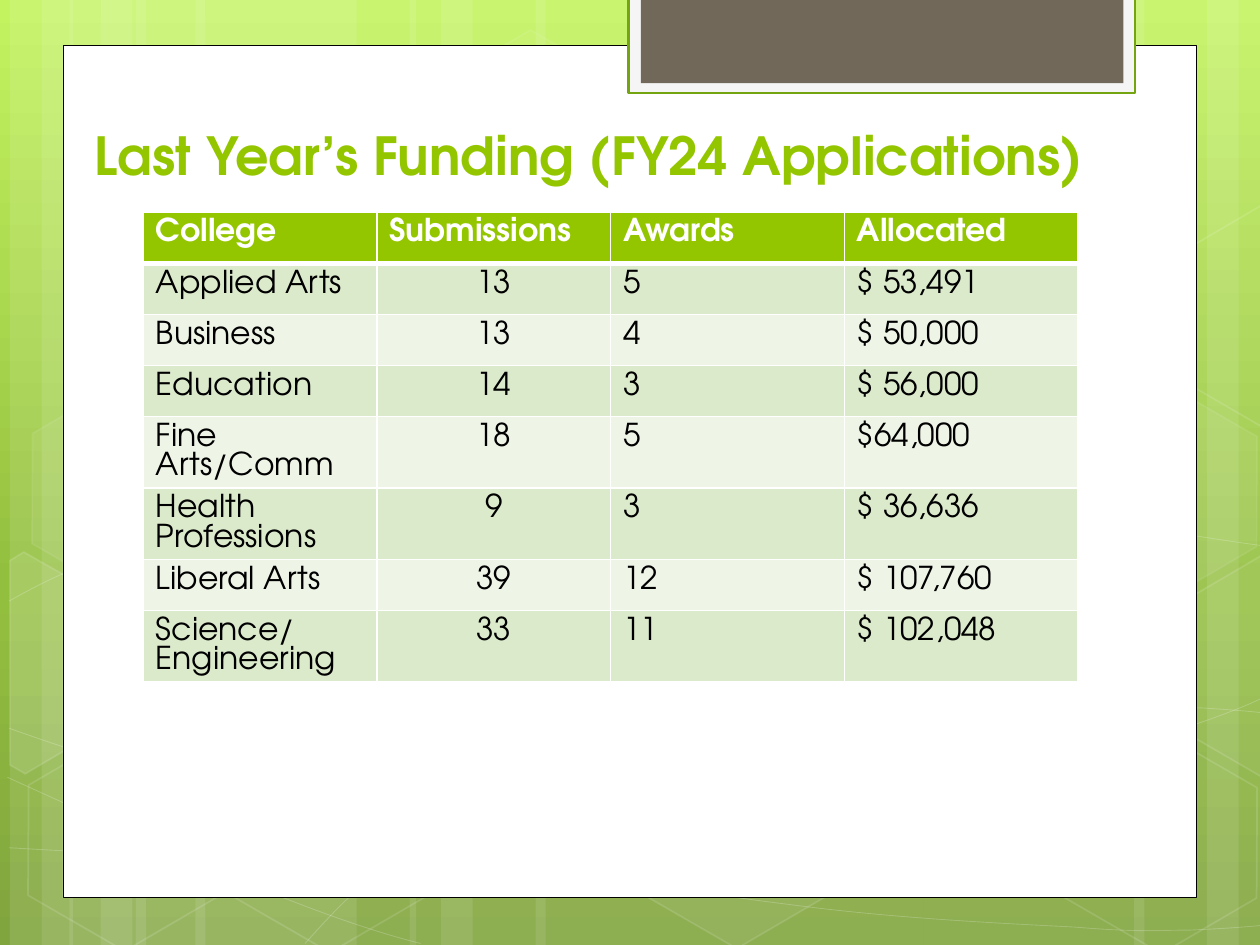
from copy import deepcopy

from lxml import etree
from pptx import Presentation
from pptx.dml.color import RGBColor
from pptx.enum.shapes import MSO_SHAPE
from pptx.enum.text import MSO_ANCHOR, MSO_AUTO_SIZE, PP_ALIGN
from pptx.oxml.ns import qn
from pptx.util import Cm, Pt

RECT, HEXAGON = MSO_SHAPE.RECTANGLE, MSO_SHAPE.HEXAGON
LEFT, CENTER = PP_ALIGN.LEFT, PP_ALIGN.CENTER
FONT = "TeX Gyre Adventor"
COLORS = {
    "white": "FFFFFF", "black": "000000", "green": "94C600",
    "band_dark": "DCEACC", "band_light": "EEF5E7",
    "tab": "F5F5F5", "tab_line": "74A510", "tab_core": "71685A",
}
BACKGROUND = [(0, "C3F35F"), (0.62, "93BF3F"), (1, "81A53E")]

# Content
TITLE = "Last Year’s Funding (FY24 Applications)"
ROWS = [
    ("College", "Submissions", "Awards", "Allocated"),
    ("Applied Arts", "13", "5", "$ 53,491"),
    ("Business", "13", "4", "$ 50,000"),
    ("Education", "14", "3", "$ 56,000"),
    ("Fine Arts/Comm", "18", "5", "$64,000"),
    ("Health Professions", "9", "3", "$ 36,636"),
    ("Liberal Arts", "39", "12", "$ 107,760"),
    ("Science/\nEngineering", "33", "11", "$ 102,048"),
]

# Backdrop, in cm. Strips: left, width
STRIPS = [
    (2.74, 4.45), (0.2, 1.27), (0.84, 2.11), (3.94, 4.45), (1.4, 1.27), (2.03, 2.11),
    (18.62, 4.45), (24.33, 1.27), (22.86, 2.11), (10.8, 7.82), (8.26, 1.27), (8.89, 2.11),
]
# Curves: a start point, then three Bezier points for each segment
CURVES = [
    [(0.18, 17.09), (1.55, 17.17), (2.92, 17.25), (4.83, 17.22),
     (6.73, 17.2), (9.09, 17.15), (11.63, 16.89),
     (14.17, 16.64), (17.78, 16.15), (20.12, 15.67),
     (22.43, 15.19), (24.82, 14.43), (25.58, 14)],
    [(0.18, 12.12), (0.91, 11.71), (1.65, 11.33), (3.07, 10.95),
     (4.52, 10.57), (6.58, 10.01), (8.81, 9.83),
     (11.07, 9.65), (13.82, 9.63), (16.61, 9.83),
     (19.41, 10.03), (24.05, 10.82), (25.58, 11.02)],
    [(0.15, 15.67), (3.23, 17.07), (6.27, 18.47), (8.48, 19.02)],
    [(0.18, 14.68), (0.97, 14.96), (1.78, 15.24), (3.25, 15.65),
     (4.72, 16.03), (6.93, 16.66), (9.07, 17.09),
     (11.18, 17.53), (13.84, 17.98), (15.95, 18.24),
     (18.06, 18.52), (20.32, 18.62), (21.67, 18.69),
     (22.99, 18.8), (23.34, 18.75), (24, 18.75),
     (24.66, 18.72), (25.12, 18.69), (25.58, 18.64)],
    [(6.15, 19.02), (6.6, 18.52), (7.06, 18.01), (7.67, 17.55),
     (8.28, 17.09), (9.14, 16.59), (9.86, 16.23),
     (10.57, 15.88), (11, 15.72), (11.94, 15.47),
     (12.85, 15.21), (14.55, 14.86), (15.44, 14.68),
     (16.36, 14.5), (16.48, 14.5), (17.27, 14.45),
     (18.06, 14.38), (19.3, 14.3), (20.17, 14.27),
     (21.06, 14.25), (22.5, 14.27), (22.5, 14.27),
     (23.07, 14.27), (23.64, 14.27), (24.21, 14.27),
     (24.66, 14.3), (25.12, 14.33), (25.55, 14.38)],
]
# Hexagons: left, top, fill opacity, line opacity
HEXAGONS = [
    (8.48, 0.91, 4, 8), (12.62, 14.96, 6, 12), (0.28, 15.01, 0, 12), (0.36, 7.92, 7, 8),
    (4.42, 15.04, 0, 12), (21.18, 15.06, 0, 12), (21.18, 7.98, 7, 8),
]
# Hexagons cut by the slide edge: points, fill opacity
LEFT_CUT = [(0.2, 11.3), (0.48, 11.13), (2.44, 12.24), (2.41, 14.48), (0.51, 15.6), (0.2, 15.42)]
RIGHT_CUT = [(23.52, 12.32), (25.43, 11.2), (25.63, 11.33),
             (25.63, 15.57), (25.45, 15.67), (23.52, 14.55)]
CUT_HEXAGONS = [(LEFT_CUT, 10), (RIGHT_CUT, 4), ([(x, y - 7.06) for x, y in RIGHT_CUT], 0)]
# Cards: box, fill, line, line width
CARDS = [
    ((1.27, 0.91, 22.86, 17.19), "white", "black", 0.5),
    ((12.67, -0.05, 10.21, 1.93), "tab", "tab_line", 1.25),
    ((12.92, -0.05, 9.73, 1.73), "tab_core", None, 0),
]


def rgb(name):
    return RGBColor.from_string(COLORS[name])


def paint(fill, color, opacity=100):
    """Solid fill, or none when there is no colour or opacity."""
    if not color or not opacity:
        fill.background()
        return
    fill.solid()
    fill.fore_color.rgb = rgb(color)
    if opacity < 100:
        clr = fill._xPr.find(".//" + qn("a:srgbClr"))
        etree.SubElement(clr, qn("a:alpha"), val=str(opacity * 1000))


def style(s, fill, fill_opacity, line, line_width=1, line_opacity=100):
    s.shadow.inherit = False
    paint(s.fill, fill, fill_opacity)
    paint(s.line.fill, line, line_opacity)
    if line:
        s.line.width = Pt(line_width)


def add_box(kind, box):
    return slide.shapes.add_shape(kind, *map(Cm, box))


def add_outline(points, close):
    points = [(Cm(x), Cm(y)) for x, y in points]
    builder = slide.shapes.build_freeform(*points[0])
    builder.add_line_segments(points[1:], close=close)
    return builder.convert_to_shape()


def add_curve(points):
    """An open outline whose points, three by three, become Bezier segments."""
    s = add_outline(points, False)
    lines = list(s._element.iter(qn("a:lnTo")))
    for i in range(0, len(lines), 3):
        bezier = etree.Element(qn("a:cubicBezTo"))
        lines[i].addprevious(bezier)
        for line in lines[i:i + 3]:
            bezier.append(line[0])
            line.getparent().remove(line)
    return s


def add_run(p, text, size, color, bold):
    r = p.add_run()
    r.text = text
    r.font.name, r.font.size, r.font.bold = FONT, Pt(size), bold
    r.font.color.rgb = rgb(color)


def add_borders(cell, widths):
    tcPr = cell._tc.get_or_add_tcPr()
    for i, (side, width) in enumerate(widths.items()):
        ln = etree.Element(qn("a:ln" + side), w=str(Pt(width)))
        solid = etree.SubElement(ln, qn("a:solidFill"))
        etree.SubElement(solid, qn("a:srgbClr"), val=COLORS["white"])
        tcPr.insert(i, ln)


prs = Presentation()
prs.slide_width, prs.slide_height = Cm(25.4), Cm(19.05)
slide = prs.slides.add_slide(prs.slide_layouts[5])

# Background gradient, top to bottom
fill = slide.background.fill
fill.gradient()
fill.gradient_angle = 270
first = fill.gradient_stops[0]._gs
first.addnext(deepcopy(first))
for stop, (position, color) in zip(fill.gradient_stops, BACKGROUND):
    stop.position = position
    stop.color.rgb = RGBColor.from_string(color)

# Backdrop
for left, width in STRIPS:
    style(add_box(RECT, (left, 0, width, 19.05)), "white", 10, None)
for curve in CURVES:
    style(add_curve(curve), None, 0, "white", 0.5, 20)
for left, top, fill_opacity, line_opacity in HEXAGONS:
    s = add_box(HEXAGON, (left, top, 4.45, 3.86))
    s.adjustments[0], s.adjustments[1] = 0.285, 1.155
    s.rotation = 30
    style(s, "white", fill_opacity, "white", 1, line_opacity)
for points, opacity in CUT_HEXAGONS:
    style(add_outline(points, True), "white", opacity, "white", 1, 12)

# Card and tab
for box, color, line, width in CARDS:
    style(add_box(RECT, box), color, 100, line, width)

# Title, brought in front of the card
title = slide.shapes.title
slide.shapes._spTree.append(title._element)
title.left, title.top, title.width, title.height = map(Cm, (1.65, 1.72, 20.73, 2.15))
tf = title.text_frame
tf.word_wrap, tf.auto_size, tf.vertical_anchor = True, MSO_AUTO_SIZE.NONE, MSO_ANCHOR.BOTTOM
tf.paragraphs[0].alignment = LEFT
add_run(tf.paragraphs[0], TITLE, 30, "green", True)

# Funding table
COL_WIDTH, ROW_HEIGHT = 4.71, 1.03
n_rows, n_cols = len(ROWS), len(ROWS[0])
table = slide.shapes.add_table(n_rows, n_cols, Cm(2.89), Cm(4.28),
                               Cm(n_cols * COL_WIDTH), Cm(n_rows * ROW_HEIGHT)).table
for i, row in enumerate(ROWS):
    header = i == 0
    band = "green" if header else "band_dark" if i % 2 else "band_light"
    for j, text in enumerate(row):
        cell = table.cell(i, j)
        paint(cell.fill, band)
        add_borders(cell, {"L": 1, "R": 1, "T": 3 if i == 1 else 1, "B": 3 if header else 1})
        tf = cell.text_frame
        for k, line in enumerate(text.split("\n")):
            p = tf.add_paragraph() if k else tf.paragraphs[0]
            p.alignment = CENTER if j == 1 and not header else LEFT
            add_run(p, line, 18, "white" if header else "black", header)

prs.save("out.pptx")
